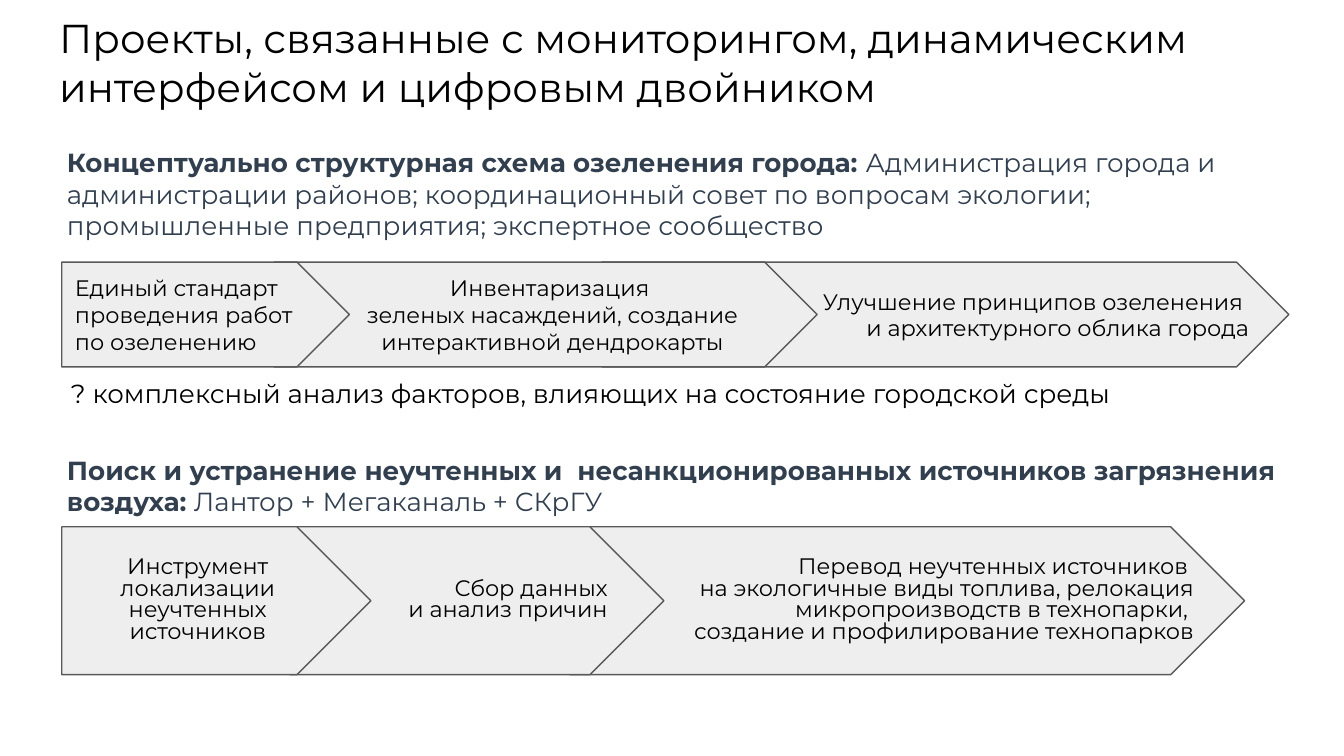
from collections import namedtuple
from dataclasses import dataclass

from pptx import Presentation
from pptx import util as u
from pptx.dml import color
from pptx.enum import shapes, text

Box = namedtuple("Box", "left top width height")
Step = namedtuple("Step", "offset width wording align indent")


@dataclass(frozen=True)
class Theme:
    """Colours, font and type sizes of the deck."""
    font: str = "Montserrat"
    ink: str = "000000"
    heading: str = "323F4F"
    fill: str = "EEEEEE"
    outline: str = "595959"
    title_size: float = 21.6
    body_size: float = 14
    step_size: float = 12
    outline_width: float = 0.75
    inset: float = 0.1


THEME = Theme()
LEFT, CENTER, RIGHT = text.PP_ALIGN.LEFT, text.PP_ALIGN.CENTER, text.PP_ALIGN.RIGHT

GREENING_STEPS = [
    Step(0, 2.14, ["Единый стандарт проведения работ по озеленению"], LEFT, 0),
    Step(1.58, 4.04, ["Инвентаризация \nзеленых насаждений, создание интерактивной дендрокарты"],
         CENTER, 0.3),
    Step(4.02, 5.11, ["Улучшение принципов озеленения ", "и архитектурного облика города"], RIGHT, 0),
]
AIR_STEPS = [
    Step(0, 2.3, ["Инструмент локализации неучтенных источников"], CENTER, 0),
    Step(1.7, 2.78, ["Сбор данных \nи анализ причин "], RIGHT, 0),
    Step(3.78, 5.02, ["Перевод неучтенных источников \nна экологичные виды топлива, релокация "
                      "микропроизводств в технопарки, \nсоздание и профилирование технопарков"],
         RIGHT, 0),
]


def rgb(value):
    """Turn a hex string into a colour."""
    return color.RGBColor.from_string(value)


def place(box):
    """Convert a box in inches to lengths."""
    return [u.Inches(value) for value in box]


def add_span(para, wording, *, size, ink, bold=False):
    """Add formatted text to a paragraph, breaking lines at newlines."""
    for number, line in enumerate(wording.split("\n")):
        if number:
            para.add_line_break()
        span = para.add_run()
        span.text = line
        span.font.name = THEME.font
        span.font.size = u.Pt(size)
        span.font.bold = bold
        span.font.color.rgb = rgb(ink)


def prepare_frame(frame, *, anchor=text.MSO_ANCHOR.TOP, fit=text.MSO_AUTO_SIZE.NONE):
    """Set wrapping, insets, anchor and fit of a text frame."""
    frame.word_wrap = True
    frame.auto_size = fit
    frame.vertical_anchor = anchor
    frame.margin_left = frame.margin_right = u.Inches(THEME.inset)
    frame.margin_top = frame.margin_bottom = u.Inches(THEME.inset)


def add_title(page, box, wording):
    """Fill and place the title placeholder."""
    title = page.shapes.title
    title.left, title.top, title.width, title.height = place(box)
    prepare_frame(title.text_frame)
    para = title.text_frame.paragraphs[0]
    para.alignment = LEFT
    add_span(para, wording, size=THEME.title_size, ink=THEME.ink)


def add_statement(page, box, wording, *, lead="", ink=THEME.ink):
    """Place a text box with an optional bold lead."""
    frame = page.shapes.add_textbox(*place(box)).text_frame
    prepare_frame(frame, fit=text.MSO_AUTO_SIZE.SHAPE_TO_FIT_TEXT)
    para = frame.paragraphs[0]
    if lead:
        add_span(para, lead, size=THEME.body_size, ink=ink, bold=True)
    add_span(para, wording, size=THEME.body_size, ink=ink)


def add_step(page, box, step, spacing):
    """Draw one arrow-shaped step with its text."""
    arrow = page.shapes.add_shape(shapes.MSO_SHAPE.PENTAGON, *place(box))
    arrow.shadow.inherit = False
    arrow.fill.solid()
    arrow.fill.fore_color.rgb = rgb(THEME.fill)
    arrow.line.color.rgb = rgb(THEME.outline)
    arrow.line.width = u.Pt(THEME.outline_width)
    frame = arrow.text_frame
    prepare_frame(frame, anchor=text.MSO_ANCHOR.MIDDLE)
    for number, wording in enumerate(step.wording):
        para = frame.add_paragraph() if number else frame.paragraphs[0]
        para.alignment = step.align
        para.line_spacing = spacing
        if step.indent:
            para._p.get_or_add_pPr().set("marL", str(u.Inches(step.indent)))
        add_span(para, wording, size=THEME.step_size, ink=THEME.ink)


def add_chain(page, box, steps, *, spacing=1.0):
    """Lay overlapping steps in a row, the first on top."""
    for step in reversed(steps):
        add_step(page, Box(box.left + step.offset, box.top, step.width, box.height), step, spacing)


def build_projects(deck):
    """Build the slide about monitoring projects."""
    page = deck.slides.add_slide(deck.slide_layouts[5])
    add_title(page, Box(0.34, 0, 9.32, 1.08),
              "Проекты, связанные с мониторингом, динамическим интерфейсом и цифровым двойником")
    add_statement(page, Box(0.4, 0.99, 8.81, 0.91),
                  "Администрация города и администрации районов; координационный совет по вопросам "
                  "экологии; промышленные предприятия; экспертное сообщество",
                  lead="Концептуально структурная схема озеленения города: ", ink=THEME.heading)
    add_chain(page, Box(0.46, 1.95, 9.13, 0.78), GREENING_STEPS)
    add_statement(page, Box(0.43, 2.71, 9.04, 0.44),
                  "? комплексный анализ факторов, влияющих на состояние городской среды")
    add_statement(page, Box(0.4, 3.28, 9.42, 0.67), "Лантор + Мегаканаль + СКрГУ",
                  lead="Поиск и устранение неучтенных и  несанкционированных источников "
                       "загрязнения воздуха: ", ink=THEME.heading)
    add_chain(page, Box(0.46, 3.92, 8.8, 1.1), AIR_STEPS, spacing=0.8)


def main():
    """Create and save the deck."""
    deck = Presentation()
    deck.slide_width = u.Inches(10)
    deck.slide_height = deck.slide_width * 9 // 16
    build_projects(deck)
    deck.save("out.pptx")


if __name__ == "__main__":
    main()
